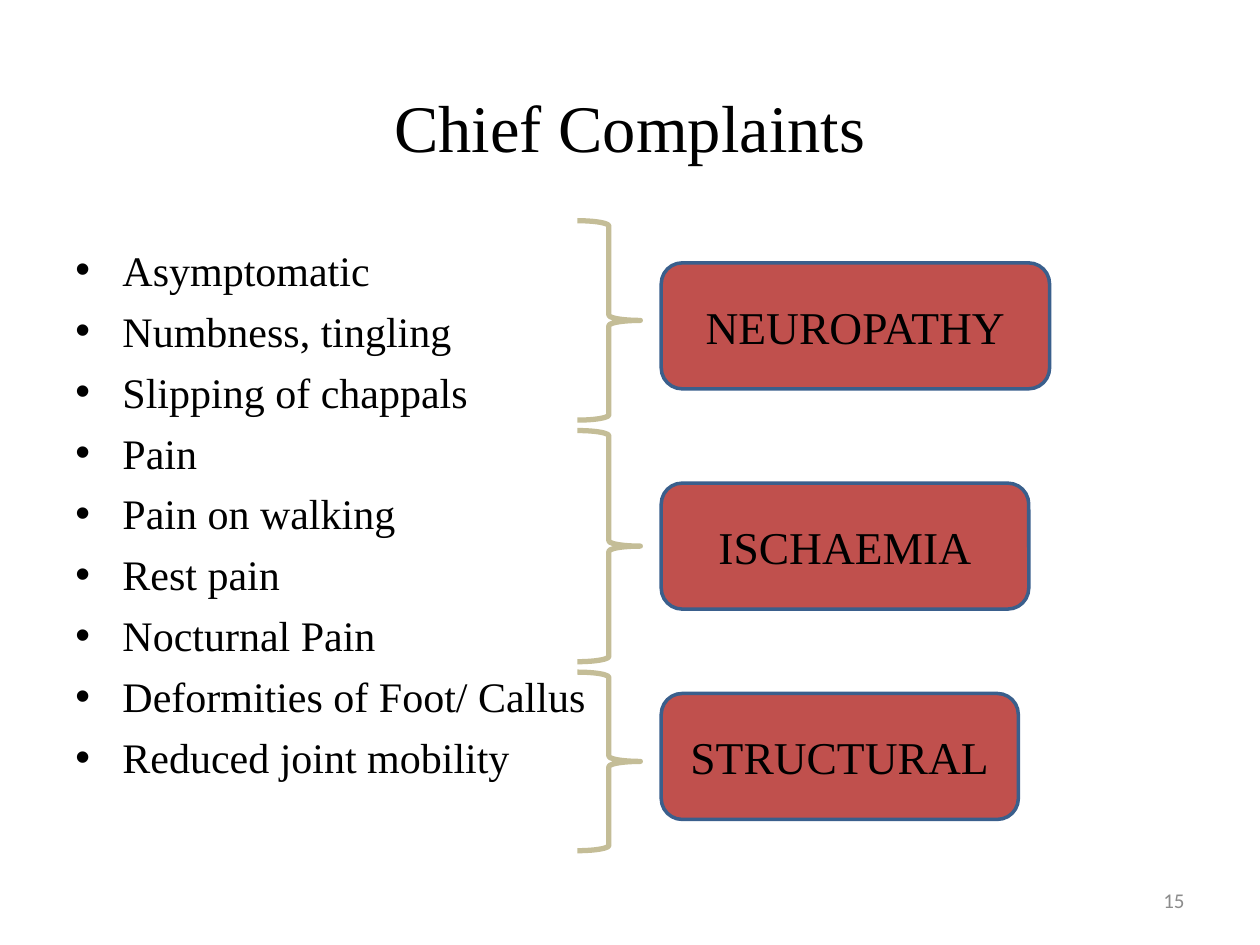
import pptx
import pptx.dml.color
import pptx.enum.shapes
import pptx.enum.text
import pptx.oxml
import pptx.oxml.ns
import pptx.util

Cm = pptx.util.Cm
Pt = pptx.util.Pt
RGB = pptx.dml.color.RGBColor
SHAPE = pptx.enum.shapes.MSO_SHAPE
ALIGN = pptx.enum.text.PP_ALIGN
ANCHOR = pptx.enum.text.MSO_ANCHOR

BLACK = RGB(0x00, 0x00, 0x00)
GREY = RGB(0x8C, 0x8C, 0x8C)
TAN = RGB(0xC4, 0xBD, 0x97)
RED = RGB(0xC0, 0x50, 0x4D)
BLUE = RGB(0x3A, 0x5F, 0x8C)

SERIF = "Times New Roman"
TITLE = {"name": SERIF, "size": Pt(38)}
ITEM = {"name": SERIF, "size": Pt(24)}
LABEL = {"name": SERIF, "size": Pt(26)}
NUMBER = {"name": "Calibri", "size": Pt(12)}

SIGNS = [
    "Asymptomatic",
    "Numbness, tingling",
    "Slipping of chappals",
    "Pain",
    "Pain on walking",
    "Rest pain",
    "Nocturnal Pain",
    "Deformities of Foot/ Callus",
    "Reduced joint mobility",
]
GROUPS = [
    ("NEUROPATHY", 0, 4.02, 0.85, 7.83),
    ("ISCHAEMIA", 4.23, 4.66, 5.29, 7.41),
    ("STRUCTURAL", 9.1, 3.6, 9.53, 7.2),
]


def write(frame, lines, style, color, align, anchor):
    """Fill a text frame with one styled paragraph per line."""
    frame.word_wrap = True
    frame.vertical_anchor = anchor
    frame.text = "\n".join(lines)
    for para in frame.paragraphs:
        para.alignment = align
        font = para.runs[0].font
        for key, value in style.items():
            setattr(font, key, value)
        font.color.rgb = color


def add_text(slide, box, lines, style, color, align, anchor):
    """Add a text box and return its frame."""
    frame = slide.shapes.add_textbox(*map(Cm, box)).text_frame
    write(frame, lines, style, color, align, anchor)
    return frame


def add_list(slide, box):
    """Add the bulleted list of complaints."""
    frame = add_text(slide, box, SIGNS, ITEM, BLACK, ALIGN.LEFT, ANCHOR.TOP)
    for para in frame.paragraphs:
        para.space_before = Pt(6)
        props = para._p.get_or_add_pPr()
        props.set("marL", str(Cm(0.95)))
        props.set("indent", str(-Cm(0.95)))
        for tag, key, value in (("a:buFont", "typeface", "Arial"),
                                ("a:buChar", "char", "•")):
            node = pptx.oxml.parse_xml(
                f'<{tag} {pptx.oxml.ns.nsdecls("a")} {key}="{value}"/>')
            props.append(node)


def add_shape(slide, kind, box, line, width):
    """Add an outlined preset shape without a shadow."""
    shape = slide.shapes.add_shape(kind, *map(Cm, box))
    shape.shadow.inherit = False
    shape.line.color.rgb = line
    shape.line.width = Pt(width)
    return shape


def add_groups(slide, left, top):
    """Add the braces and, beside them, the cause of each group."""
    for name, start, height, drop, width in GROUPS:
        brace = add_shape(slide, SHAPE.RIGHT_BRACE,
                          (left, top + start, 1.27, height), TAN, 3)
        brace.fill.background()
        label = add_shape(slide, SHAPE.ROUNDED_RECTANGLE,
                          (left + 1.69, top + drop, width, 2.54), BLUE, 2)
        label.fill.solid()
        label.fill.fore_color.rgb = RED
        write(label.text_frame, [name], LABEL, BLACK,
              ALIGN.CENTER, ANCHOR.MIDDLE)


def main():
    """Build and save the slide."""
    deck = pptx.Presentation()
    deck.slide_width, deck.slide_height = Cm(25.4), Cm(19.05)
    slide = deck.slides.add_slide(deck.slide_layouts[6])
    add_text(slide, (1.27, 1.27, 22.86, 2.54), ["Chief Complaints"],
             TITLE, BLACK, ALIGN.CENTER, ANCHOR.MIDDLE)
    add_list(slide, (1.27, 4.8, 22.86, 14.25))
    add_groups(slide, 11.64, 4.45)
    add_text(slide, (18.2, 17.65, 5.93, 1.01), ["15"],
             NUMBER, GREY, ALIGN.RIGHT, ANCHOR.MIDDLE)
    deck.save("out.pptx")


if __name__ == "__main__":
    main()
